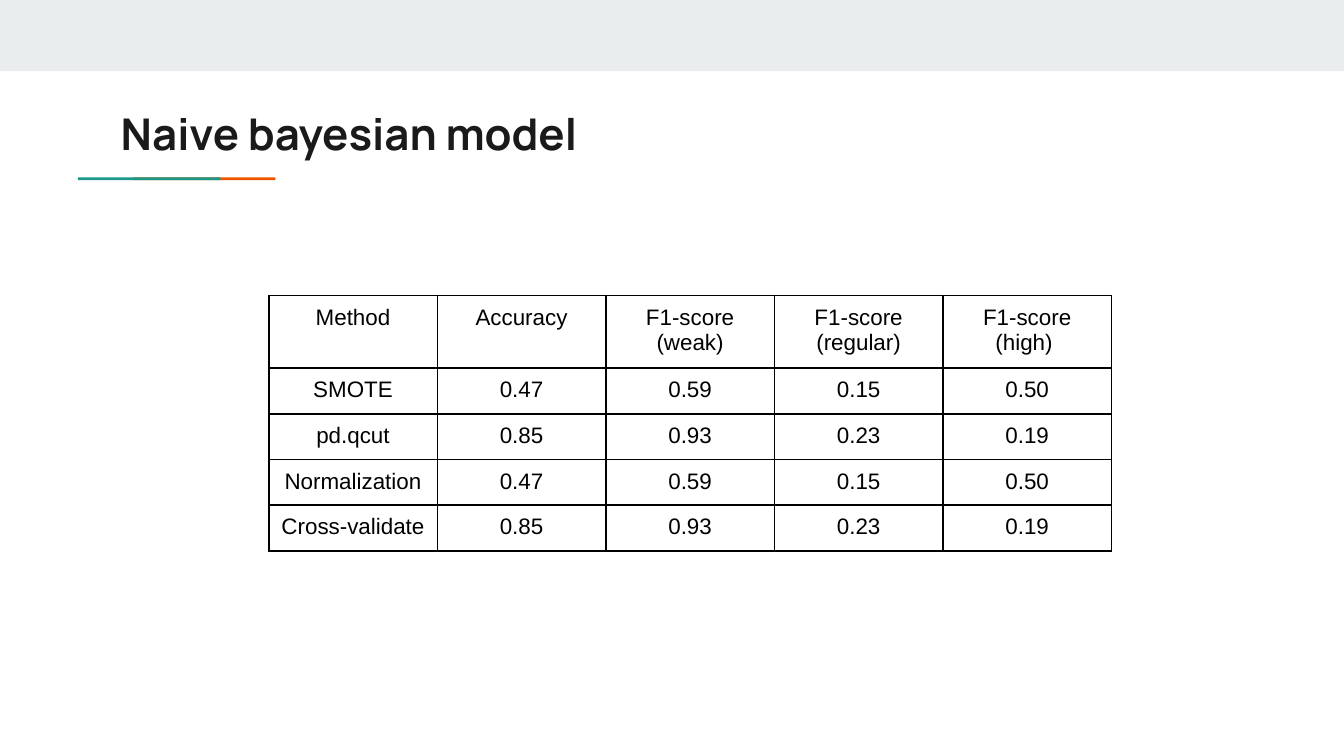
from lxml import etree
from pptx import Presentation
from pptx import util as u
from pptx.dml.color import RGBColor
from pptx.enum import shapes, text
from pptx.oxml.ns import qn

# Content
TITLE = "Naive bayesian model"
ROWS = [
    ("Method", "Accuracy", "F1-score (weak)", "F1-score (regular)", "F1-score (high) "),
    ("SMOTE", "0.47", "0.59", "0.15", "0.50"),
    ("pd.qcut", "0.85", "0.93", "0.23", "0.19"),
    ("Normalization", "0.47", "0.59", "0.15", "0.50"),
    ("Cross-validate", "0.85", "0.93", "0.23", "0.19"),
]

# Format
BAND = RGBColor(0xE9, 0xED, 0xEE)
ORANGE = RGBColor(0xEB, 0x56, 0x00)
TEAL = RGBColor(0x1A, 0x99, 0x88)
INK = RGBColor(0x1A, 0x1A, 0x1A)
BLACK = RGBColor(0, 0, 0)
TITLE_FONT = {"name": "Manrope", "size": u.Pt(23.4), "bold": True}
CELL_FONT = {"name": "Arial", "size": u.Pt(12), "bold": False}
SIDES = ("left", "top", "right", "bottom")

# Layout in inches: left, top, width, height
WIDTH = 10
HEIGHT = WIDTH * 9 / 16
BARS = [
    (BAND, (0, 0, WIDTH, 0.53)),
    (ORANGE, (0.99, 1.32, 1.06, 0.02)),
    (TEAL, (0.58, 1.32, 1.06, 0.02)),
]
TITLE_BOX = (0.8, 0.69, 8.41, 0.6)
TABLE_LEFT, TABLE_TOP, TABLE_WIDTH = 2, 2.2, 6.27
ROW_HEIGHT = 0.01  # rows grow to fit their text


def inches(box):
    return [u.Inches(value) for value in box]


def set_margins(target, margin):
    for side in SIDES:
        setattr(target, f"margin_{side}", u.Inches(margin))


def style_font(font, values, color):
    for name, value in values.items():
        setattr(font, name, value)
    font.color.rgb = color


def add_borders(cell):
    properties = cell._tc.get_or_add_tcPr()
    for index, tag in enumerate(("a:lnL", "a:lnR", "a:lnT", "a:lnB")):
        line = etree.Element(qn(tag), w=str(u.Pt(1)))
        fill = etree.SubElement(line, qn("a:solidFill"))
        etree.SubElement(fill, qn("a:srgbClr"), val=str(BLACK))
        properties.insert(index, line)


presentation = Presentation()
presentation.slide_width, presentation.slide_height = inches((WIDTH, HEIGHT))
slide = presentation.slides.add_slide(presentation.slide_layouts[6])

# Top band and two-colour underline
for color, box in BARS:
    bar = slide.shapes.add_shape(shapes.MSO_SHAPE.RECTANGLE, *inches(box))
    bar.shadow.inherit = False
    bar.fill.solid()
    bar.fill.fore_color.rgb = color
    bar.line.fill.background()

# Title
frame = slide.shapes.add_textbox(*inches(TITLE_BOX)).text_frame
frame.word_wrap = True
frame.vertical_anchor = text.MSO_ANCHOR.MIDDLE
set_margins(frame, 0.1)
frame.text = TITLE
style_font(frame.paragraphs[0].runs[0].font, TITLE_FONT, INK)

# Score table
table_box = (TABLE_LEFT, TABLE_TOP, TABLE_WIDTH, ROW_HEIGHT * len(ROWS))
table = slide.shapes.add_table(len(ROWS), len(ROWS[0]), *inches(table_box)).table
table.first_row = table.horz_banding = False
for row, values in zip(table.rows, ROWS):
    for cell, value in zip(row.cells, values):
        cell.fill.background()
        set_margins(cell, 0.07)
        cell.text = value
        paragraph = cell.text_frame.paragraphs[0]
        paragraph.alignment = text.PP_ALIGN.CENTER
        style_font(paragraph.runs[0].font, CELL_FONT, BLACK)
        add_borders(cell)

presentation.save("out.pptx")
